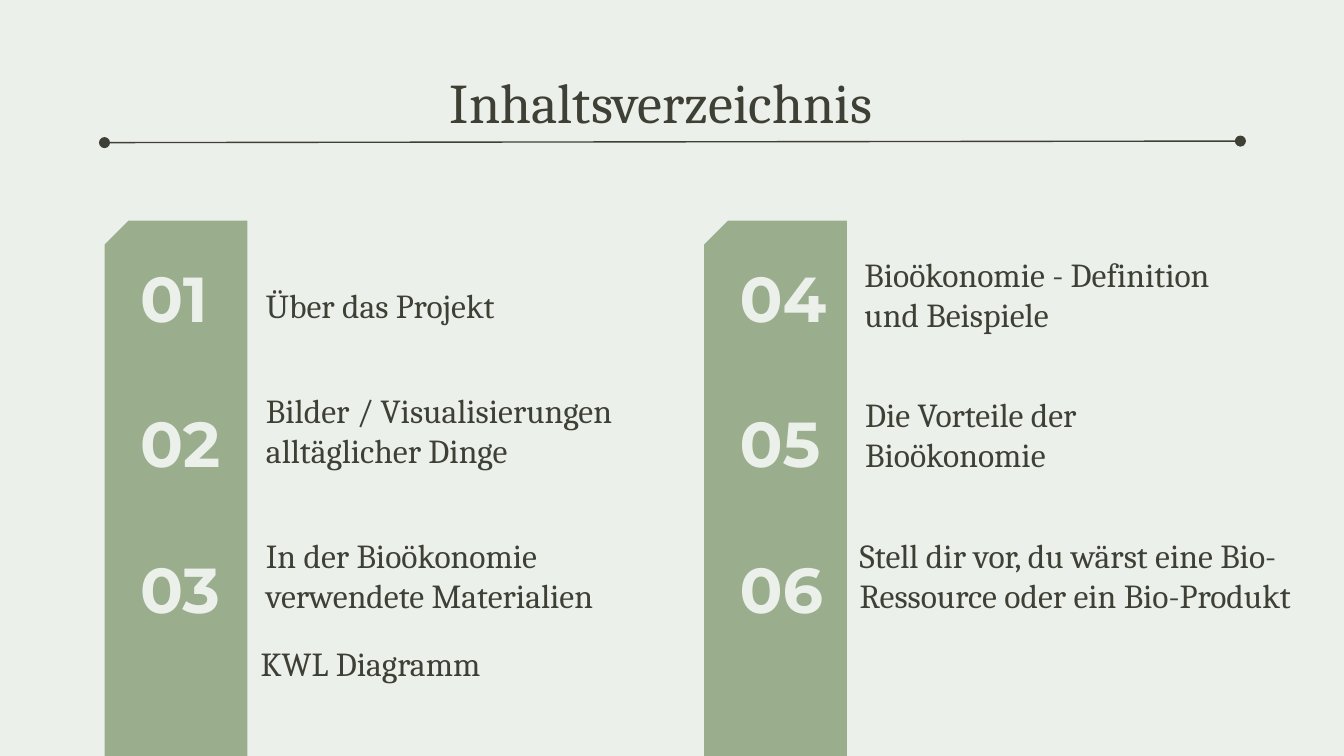
from lxml.etree import SubElement
from pptx import Presentation
from pptx.dml.color import RGBColor
from pptx.enum.shapes import MSO_CONNECTOR as Connector, MSO_SHAPE as Shape
from pptx.enum.text import MSO_ANCHOR as Anchor, PP_ALIGN as Align
from pptx.oxml.ns import qn
from pptx.util import Pt

BACKGROUND = RGBColor(0xEC, 0xF0, 0xEA)
INK = RGBColor(0x3E, 0x40, 0x35)
SAGE = RGBColor(0x9A, 0xAE, 0x8E)

HEADING = {"name": "Cambria", "size": Pt(30)}
ENTRY = {"name": "Cambria", "size": Pt(18)}
NUMBER = {"name": "Montserrat", "size": Pt(34), "bold": True}

COLUMN_LEFTS = (56, 377.2)
ROW_TOP, ROW_PITCH = 134.8, 78
ENTRY_SIZE = (216.7, 46)
ENTRIES = [
    ("Über das Projekt", 135.4, 135.4, *ENTRY_SIZE),
    ("Bilder / Visualisierungen alltäglicher Dinge", 135.4, 213.1, *ENTRY_SIZE),
    ("In der Bioökonomie verwendete Materialien", 135.4, 291, *ENTRY_SIZE),
    ("KWL Diagramm", 132.5, 327, *ENTRY_SIZE),
    ("Bioökonomie - Definition und Beispiele", 456, 140.2, *ENTRY_SIZE),
    ("Die Vorteile der Bioökonomie", 456.4, 215.3, *ENTRY_SIZE),
    ("Stell dir vor, du wärst eine Bio-Ressource oder ein Bio-Produkt",
     453.5, 291, 270, 46),
]


def add_text(slide, text, box, font_format, color=INK,
             anchor=Anchor.BOTTOM, alignment=Align.LEFT):
    frame = slide.shapes.add_textbox(*map(Pt, box)).text_frame
    frame_format = {
        "word_wrap": True, "vertical_anchor": anchor,
        "margin_left": Pt(7.2), "margin_right": Pt(7.2),
        "margin_top": Pt(7.2), "margin_bottom": Pt(7.2),
    }
    for name, value in frame_format.items():
        setattr(frame, name, value)
    paragraph = frame.paragraphs[0]
    paragraph.alignment = alignment
    run = paragraph.add_run()
    run.text = text
    for name, value in font_format.items():
        setattr(run.font, name, value)
    run.font.color.rgb = color


def add_band(slide, left):
    band = slide.shapes.add_shape(
        Shape.SNIP_1_RECTANGLE, Pt(left), Pt(118.3), Pt(76.5), Pt(286.7))
    band.adjustments[0] = 0.167
    band.shadow.inherit = False
    band.fill.solid()
    band.fill.fore_color.rgb = SAGE
    band.line.fill.background()
    band._element.spPr.find(qn("a:xfrm")).set("flipH", "1")


def add_rule(slide, start, end):
    rule = slide.shapes.add_connector(
        Connector.STRAIGHT, *map(Pt, start + end))
    rule.line.color.rgb = INK
    rule.line.width = Pt(0.75)
    line = rule.line._get_or_add_ln()
    for tag in ("a:headEnd", "a:tailEnd"):
        SubElement(line, qn(tag), type="oval", w="med", len="med")
    SubElement(rule._element.spPr, qn("a:effectLst"))


def main():
    presentation = Presentation()
    presentation.slide_width, presentation.slide_height = Pt(720), Pt(405)
    slide = presentation.slides.add_slide(presentation.slide_layouts[6])
    slide.background.fill.solid()
    slide.background.fill.fore_color.rgb = BACKGROUND

    add_text(slide, "Inhaltsverzeichnis", (37.4, 29, 633.6, 72), HEADING,
             anchor=Anchor.TOP, alignment=Align.CENTER)
    for column, left in enumerate(COLUMN_LEFTS):
        add_band(slide, left)
        for row in range(3):
            box = (left + 12, ROW_TOP + row * ROW_PITCH, 64.8, 51.8)
            add_text(slide, f"{column * 3 + row + 1:02}", box, NUMBER, BACKGROUND)
    for text, *box in ENTRIES:
        add_text(slide, text, box, ENTRY)
    add_rule(slide, (56, 76.4), (664.5, 75.6))

    presentation.save("out.pptx")


if __name__ == "__main__":
    main()
